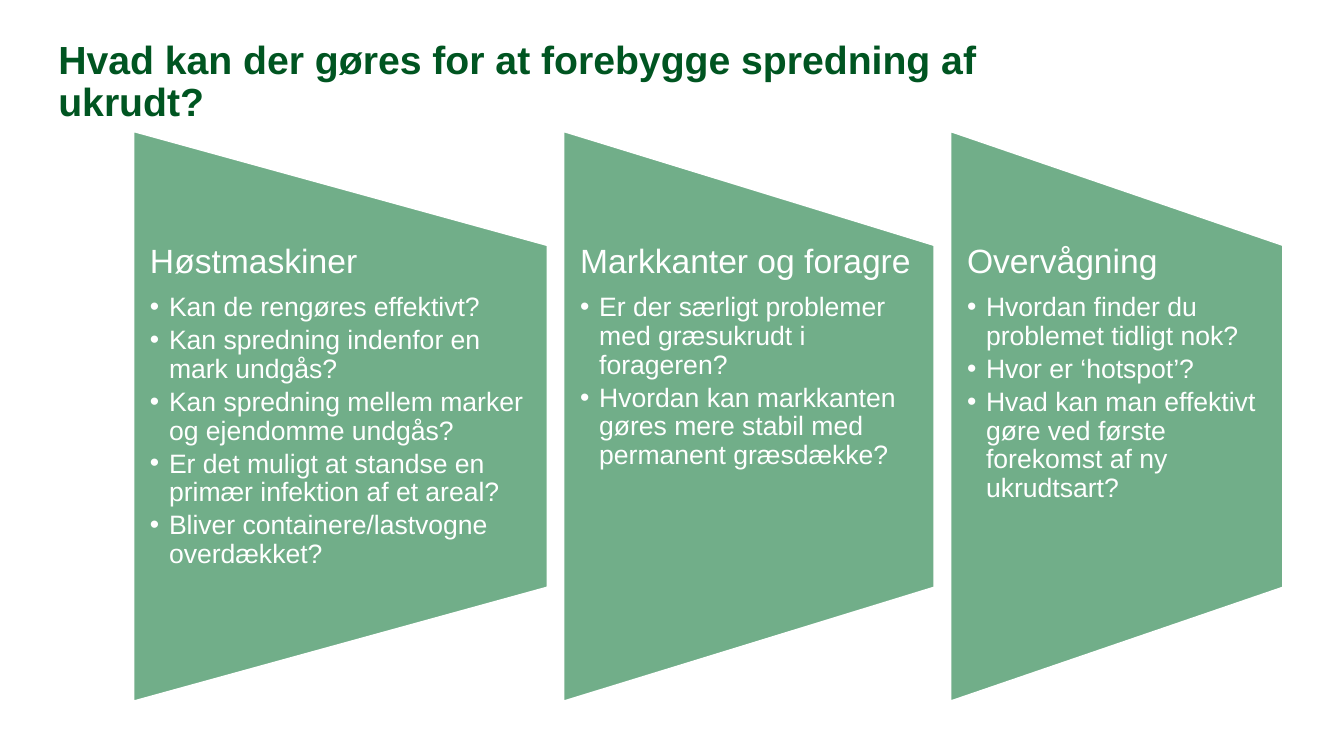
from lxml import etree
from pptx import Presentation
from pptx.dml.color import RGBColor
from pptx.enum.shapes import MSO_SHAPE
from pptx.enum.text import MSO_ANCHOR, MSO_AUTO_SIZE, PP_ALIGN
from pptx.oxml.ns import qn
from pptx.util import Cm, Pt

GREEN = RGBColor(0x71, 0xAE, 0x89)
DARK = RGBColor(0x00, 0x55, 0x21)
WHITE = RGBColor(0xFF, 0xFF, 0xFF)
FUNNEL = MSO_SHAPE.FLOWCHART_MANUAL_OPERATION
TOP, MIDDLE = MSO_ANCHOR.TOP, MSO_ANCHOR.MIDDLE
LEFT = PP_ALIGN.LEFT
NO_FIT = MSO_AUTO_SIZE.NONE

# Panel layout in cm
START, GAP = 3.35, 0.38
CENTRE, LENGTH = 10.49, 14.4
TEXT_TOP, TEXT_HIGH = 6.17, 8.64

TITLE = "Hvad kan der gøres for at forebygge spredning af ukrudt?"
PANELS = [
    (10.46, "Høstmaskiner", [
        "Kan de rengøres effektivt?",
        "Kan spredning indenfor en mark undgås?",
        "Kan spredning mellem marker og ejendomme undgås?",
        "Er det muligt at standse en primær infektion af et areal?",
        "Bliver containere/lastvogne overdækket?"]),
    (9.37, "Markkanter og foragre", [
        "Er der særligt problemer med græsukrudt i forageren?",
        "Hvordan kan markkanten gøres mere stabil med permanent græsdække?"]),
    (8.41, "Overvågning", [
        "Hvordan finder du problemet tidligt nok?",
        "Hvor er ‘hotspot’?",
        "Hvad kan man effektivt gøre ved første forekomst af ny ukrudtsart?"]),
]


class Deck:
    font = "Arial"

    def __init__(self, slide):
        self.slide = slide

    def place(self, holder, left, top, width, height, anchor, inset):
        holder.left, holder.top = Cm(left), Cm(top)
        holder.width, holder.height = Cm(width), Cm(height)
        frame = holder.text_frame
        frame.word_wrap = True
        frame.auto_size = NO_FIT
        frame.vertical_anchor = anchor
        frame.margin_left = frame.margin_right = Cm(inset)
        frame.margin_top = frame.margin_bottom = 0
        return frame

    def style(self, para, size, color, bold=False, after=0):
        para.alignment = LEFT
        para.line_spacing = 0.9
        para.space_before = Pt(0)
        para.space_after = Pt(after)
        for run in para.runs:
            font = run.font
            font.name, font.size, font.bold = self.font, Pt(size), bold
            font.color.rgb = color

    def bullet(self, para, mark=None):
        props = para._p.get_or_add_pPr()
        indent = Cm(0.48) if mark else 0
        props.set("marL", str(indent))
        props.set("indent", str(-indent))
        if mark:
            etree.SubElement(props, qn("a:buFont")).set("typeface", self.font)
            etree.SubElement(props, qn("a:buChar")).set("char", mark)
        else:
            etree.SubElement(props, qn("a:buNone"))

    def title(self, text):
        frame = self.place(self.slide.shapes.title, 1.47, 1.09, 26.06, 1.98, MIDDLE, 0)
        frame.text = text
        self.style(frame.paragraphs[0], 28, DARK, bold=True)

    def funnel(self, left, width):
        # The shape is turned on its side around its centre
        shape = self.slide.shapes.add_shape(
            FUNNEL, Cm(left + (width - LENGTH) / 2), Cm(CENTRE - width / 2),
            Cm(LENGTH), Cm(width))
        shape.rotation = 270
        shape.shadow.inherit = False
        shape.fill.solid()
        shape.fill.fore_color.rgb = GREEN
        shape.line.color.rgb = WHITE
        shape.line.width = Pt(2)

    def list(self, holder, left, width, head, items):
        frame = self.place(holder, left, TEXT_TOP, width, TEXT_HIGH, TOP, 0.43)
        frame.text = head
        self.bullet(frame.paragraphs[0])
        self.style(frame.paragraphs[0], 24, WHITE, after=9)
        for item in items:
            para = frame.add_paragraph()
            para.text = item
            para.level = 1
            self.bullet(para, "•")
            self.style(para, 19, WHITE, after=3)
        # Bring the text in front of its panel
        self.slide.shapes._spTree.append(holder._element)


def main():
    prs = Presentation()
    prs.slide_width, prs.slide_height = Cm(33.87), Cm(19.05)
    slide = prs.slides.add_slide(prs.slide_layouts.get_by_name("Comparison"))
    deck = Deck(slide)

    # Title
    deck.title(TITLE)

    # Panels with their lists
    bodies = list(slide.placeholders)[1:]
    left = START
    for body, (width, head, items) in zip(bodies, PANELS):
        deck.funnel(left, width)
        deck.list(body, left, width, head, items)
        left += width + GAP

    # Unused placeholder
    for body in bodies[len(PANELS):]:
        body._element.getparent().remove(body._element)

    prs.save("out.pptx")


if __name__ == "__main__":
    main()
